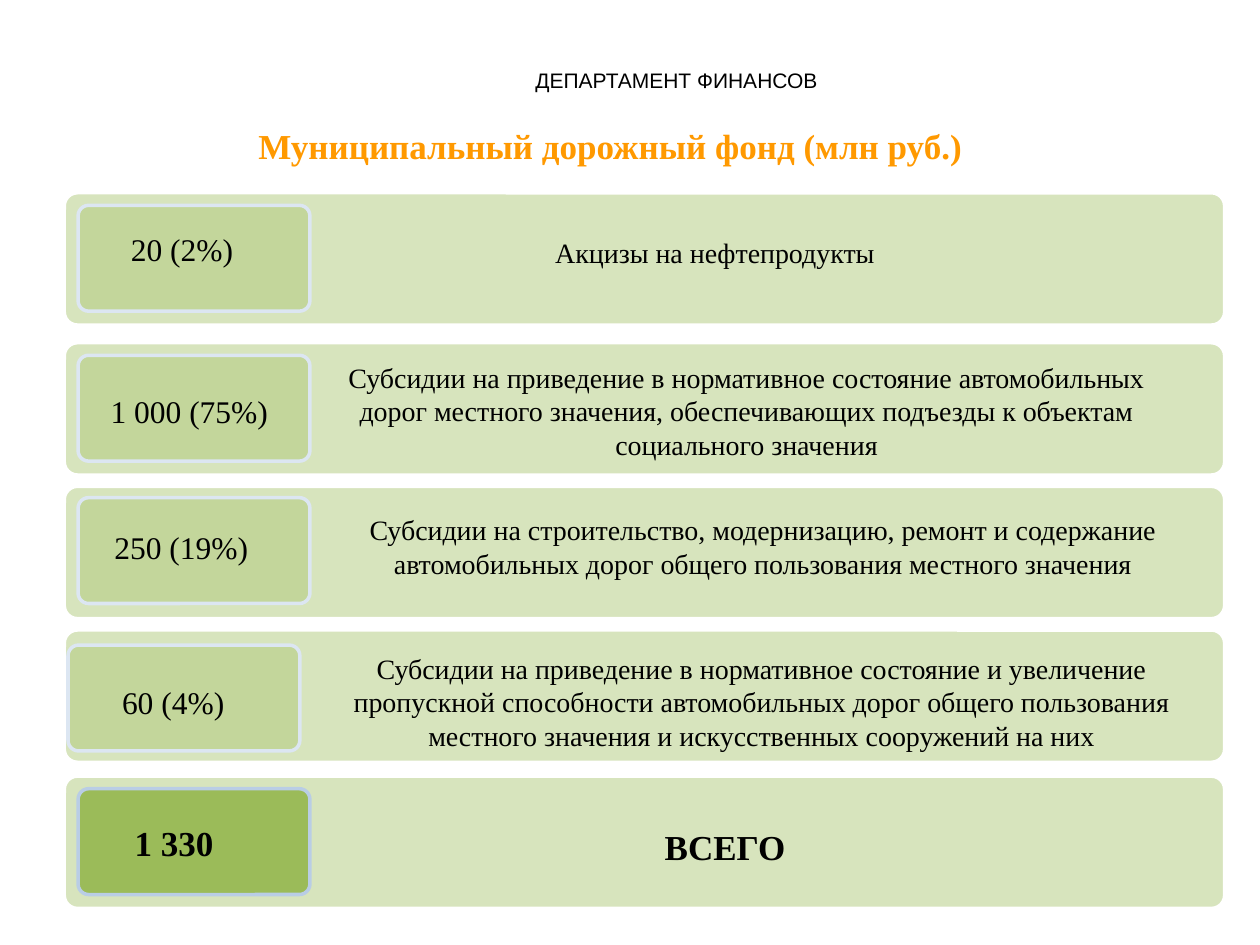
from pptx import Presentation
from pptx.dml.color import RGBColor
from pptx.enum.shapes import MSO_SHAPE
from pptx.enum.text import MSO_ANCHOR, PP_ALIGN
from pptx.util import Inches, Pt

ROUND = MSO_SHAPE.ROUNDED_RECTANGLE
TOP = MSO_ANCHOR.TOP
LEFT, MID = PP_ALIGN.LEFT, PP_ALIGN.CENTER
BLACK = RGBColor(0, 0, 0)
WHITE = RGBColor(255, 255, 255)
ORANGE = RGBColor(0xFF, 0x99, 0x00)
PALE = RGBColor(0xD7, 0xE4, 0xBD)
GREEN = RGBColor(0xC3, 0xD6, 0x9B)
DEEP = RGBColor(0x9B, 0xBB, 0x59)
MIST = RGBColor(0xDC, 0xE6, 0xF2)
SKY = RGBColor(0xB9, 0xCD, 0xE5)
SERIF = "Times New Roman"

HEAD = "ДЕПАРТАМЕНТ ФИНАНСОВ"
TITLE = "Муниципальный дорожный фонд (млн руб.)"
ROWS = [
    dict(top=1.53, badge=(0.62, 1.63),
         sum="20 (2%)", sum_at=(0.94, 1.78, 1.02, 0.4),
         name="Акцизы на нефтепродукты", name_at=(4.29, 1.82, 2.77, 0.37)),
    dict(top=2.72, badge=(0.62, 2.82),
         sum="1 000 (75%)", sum_at=(0.78, 3.06, 1.46, 0.4),
         name="Субсидии на приведение в нормативное состояние автомобильных\n"
              "дорог местного значения, обеспечивающих подъезды к объектам\n"
              "социального значения", name_at=(2.63, 2.81, 6.59, 0.91)),
    dict(top=3.86, badge=(0.62, 3.95),
         sum="250 (19%)", sum_at=(0.81, 4.14, 1.27, 0.4),
         name="Субсидии на строительство, модернизацию, ремонт и содержание "
              "автомобильных дорог общего пользования местного значения",
         name_at=(2.48, 4.02, 7.15, 0.64), wrap=True),
    dict(top=5, badge=(0.54, 5.12),
         sum="60 (4%)", sum_at=(0.87, 5.37, 1.02, 0.4),
         name="Субсидии на приведение в нормативное состояние и увеличение\n"
              "пропускной способности автомобильных дорог общего пользования\n"
              "местного значения и искусственных сооружений на них",
         name_at=(2.63, 5.12, 6.83, 0.91)),
    dict(top=6.16, badge=(0.62, 6.26), total=True,
         sum="1 330", sum_at=(0.97, 6.47, 0.9, 0.44),
         name="ВСЕГО", name_at=(5.17, 6.5, 1.17, 0.44)),
]


def style(frame, text, size, font=SERIF, color=BLACK, bold=False,
          align=LEFT, wrap=False):
    frame.text = text
    frame.word_wrap = wrap
    frame.vertical_anchor = TOP
    for para in frame.paragraphs:
        para.alignment = align
        for run in para.runs:
            run.font.size = Pt(size)
            run.font.name = font
            run.font.bold = bold
            run.font.color.rgb = color


def label(slide, at, text, size, **look):
    box = slide.shapes.add_textbox(*map(Inches, at))
    style(box.text_frame, text, size, **look)


def panel(slide, at, fill, line):
    shape = slide.shapes.add_shape(ROUND, *map(Inches, at))
    shape.adjustments[0] = 0.1
    shape.shadow.inherit = False
    shape.fill.solid()
    shape.fill.fore_color.rgb = fill
    shape.line.color.rgb = line
    shape.line.width = Pt(2)


def main():
    deck = Presentation()
    deck.slide_width, deck.slide_height = Inches(10), Inches(7.5)
    slide = deck.slides.add_slide(deck.slide_layouts[5])
    title = slide.shapes.title
    title.left, title.top = Inches(1.95), Inches(0.94)
    title.width, title.height = Inches(7.15), Inches(0.44)
    style(title.text_frame, TITLE, 20, color=ORANGE, bold=True, wrap=True)
    label(slide, (0.88, 0.49, 8.98, 0.3), HEAD, 12, font="Arial",
          align=MID, wrap=True)
    for row in ROWS:
        total = row.get("total", False)
        fill, line = (DEEP, SKY) if total else (GREEN, MIST)
        panel(slide, (0.51, row["top"], 9.21, 1.05), PALE, WHITE)
        panel(slide, (*row["badge"], 1.84, 0.84), fill, line)
        label(slide, row["sum_at"], row["sum"], 20 if total else 18, bold=total)
        label(slide, row["name_at"], row["name"], 20 if total else 16,
              bold=total, align=MID, wrap=row.get("wrap", False))
    deck.save("out.pptx")


if __name__ == "__main__":
    main()
